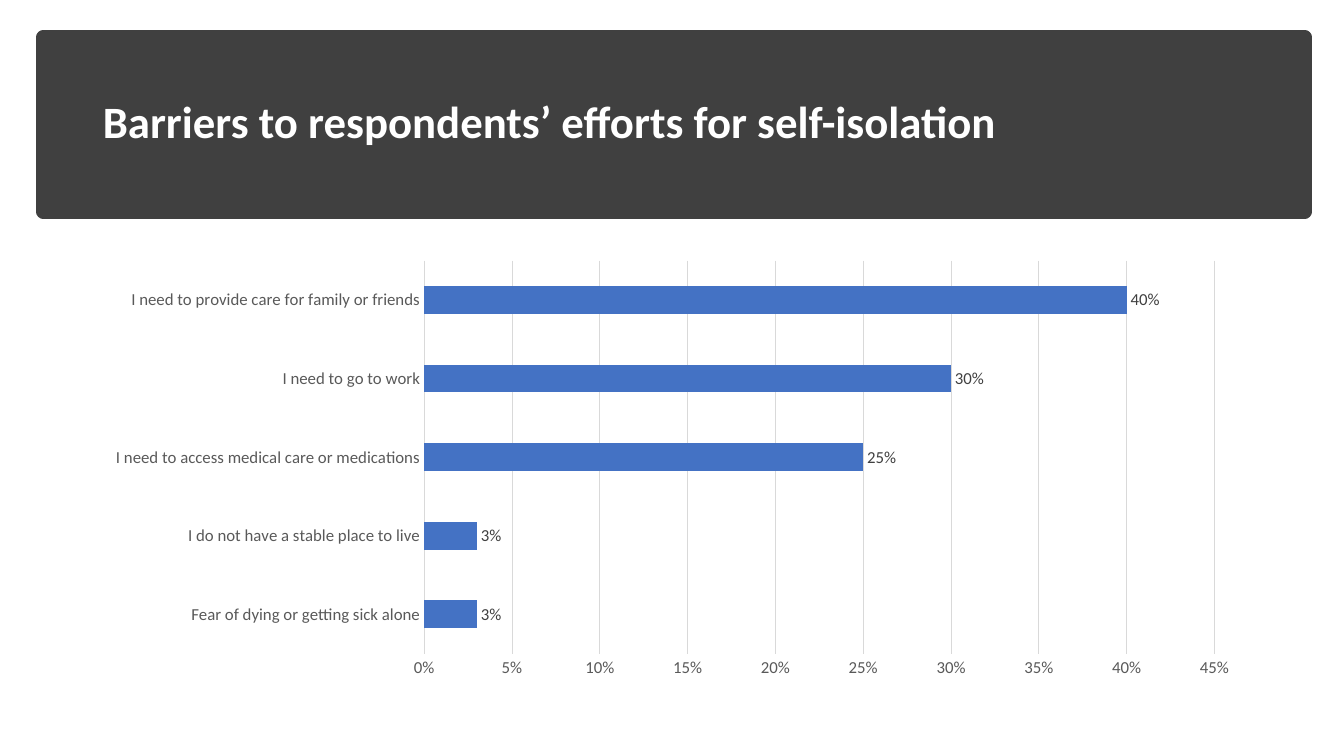
import dataclasses

import pptx
import pptx.chart.data
import pptx.dml.color
import pptx.enum.chart
import pptx.enum.shapes
import pptx.enum.text
import pptx.util

Inches = pptx.util.Inches
Pt = pptx.util.Pt


@dataclasses.dataclass(frozen=True)
class Theme:
    font: str = "Calibri"
    band: str = "404040"
    title: str = "FFFFFF"
    bar: str = "4472C4"
    axis_text: str = "595959"
    label_text: str = "404040"
    grid: str = "D9D9D9"
    title_size: int = 32
    chart_size: int = 12


BARRIERS = [
    ("Fear of dying or getting sick alone", 0.03),
    ("I do not have a stable place to live", 0.03),
    ("I need to access medical care or medications", 0.25),
    ("I need to go to work", 0.3),
    ("I need to provide care for family or friends", 0.4),
]


def rgb(color):
    return pptx.dml.color.RGBColor.from_string(color)


class SlideBuilder:
    def __init__(self, prs, theme):
        self.theme = theme
        self.s = prs.slides.add_slide(prs.slide_layouts[5])

    def style_font(self, font, size, color, bold=False):
        font.name = self.theme.font
        font.size = Pt(size)
        font.bold = bold
        font.color.rgb = rgb(color)

    def style_line(self, line, color, width):
        line.color.rgb = rgb(color)
        line.width = Pt(width)

    def band(self, *box):
        """Add a filled rectangle behind the title."""
        sp = self.s.shapes.add_shape(
            pptx.enum.shapes.MSO_SHAPE.RECTANGLE, *map(Inches, box))
        sp.shadow.inherit = False
        sp.fill.solid()
        sp.fill.fore_color.rgb = rgb(self.theme.band)
        self.style_line(sp.line, self.theme.band, 10)
        self.s.shapes.title.element.addprevious(sp.element)

    def title(self, text, *box):
        sp = self.s.shapes.title
        sp.left, sp.top, sp.width, sp.height = map(Inches, box)
        tf = sp.text_frame
        tf.word_wrap = True
        tf.vertical_anchor = pptx.enum.text.MSO_ANCHOR.MIDDLE
        p = tf.paragraphs[0]
        p.alignment = pptx.enum.text.PP_ALIGN.LEFT
        p.line_spacing = 0.9
        r = p.add_run()
        r.text = text
        self.style_font(r.font, self.theme.title_size, self.theme.title, True)

    def bar_chart(self, rows, *box):
        data = pptx.chart.data.CategoryChartData(number_format="0%")
        data.categories = [name for name, _ in rows]
        data.add_series("Series 1", [value for _, value in rows])
        chart = self.s.shapes.add_chart(
            pptx.enum.chart.XL_CHART_TYPE.BAR_CLUSTERED,
            *map(Inches, box), data).chart
        chart.has_title = False
        chart.has_legend = False
        self.style_font(chart.font, self.theme.chart_size, self.theme.axis_text)
        self.format_axes(chart)
        self.format_bars(chart.plots[0])

    def format_axes(self, chart):
        t = self.theme
        for axis in (chart.category_axis, chart.value_axis):
            axis.major_tick_mark = pptx.enum.chart.XL_TICK_MARK.NONE
            axis.minor_tick_mark = pptx.enum.chart.XL_TICK_MARK.NONE
            self.style_font(axis.tick_labels.font, t.chart_size, t.axis_text)
        chart.category_axis.has_major_gridlines = False
        self.style_line(chart.category_axis.format.line, t.grid, 0.75)
        values = chart.value_axis
        values.minimum_scale, values.maximum_scale = 0, 0.45
        values.major_unit = 0.05
        values.has_major_gridlines = True
        self.style_line(values.major_gridlines.format.line, t.grid, 0.75)
        values.format.line.fill.background()
        values.tick_labels.number_format = "0%"
        values.tick_labels.number_format_is_linked = False

    def format_bars(self, plot):
        plot.vary_by_categories = False
        plot.gap_width = 182
        series = plot.series[0]
        series.format.fill.solid()
        series.format.fill.fore_color.rgb = rgb(self.theme.bar)
        labels = series.data_labels
        labels.show_value = True
        labels.number_format = "0%"
        labels.number_format_is_linked = False
        labels.position = pptx.enum.chart.XL_LABEL_POSITION.OUTSIDE_END
        self.style_font(labels.font, self.theme.chart_size, self.theme.label_text)


def main():
    prs = pptx.Presentation()
    prs.slide_width, prs.slide_height = Inches(13.33), Inches(7.5)
    slide = SlideBuilder(prs, Theme())
    slide.band(0.43, 0.37, 12.51, 1.73)
    slide.title("Barriers to respondents’ efforts for self-isolation",
                0.92, 0.51, 11.5, 1.45)
    slide.bar_chart(BARRIERS, 0.92, 2.5, 11.5, 4.31)
    prs.save("out.pptx")


if __name__ == "__main__":
    main()
